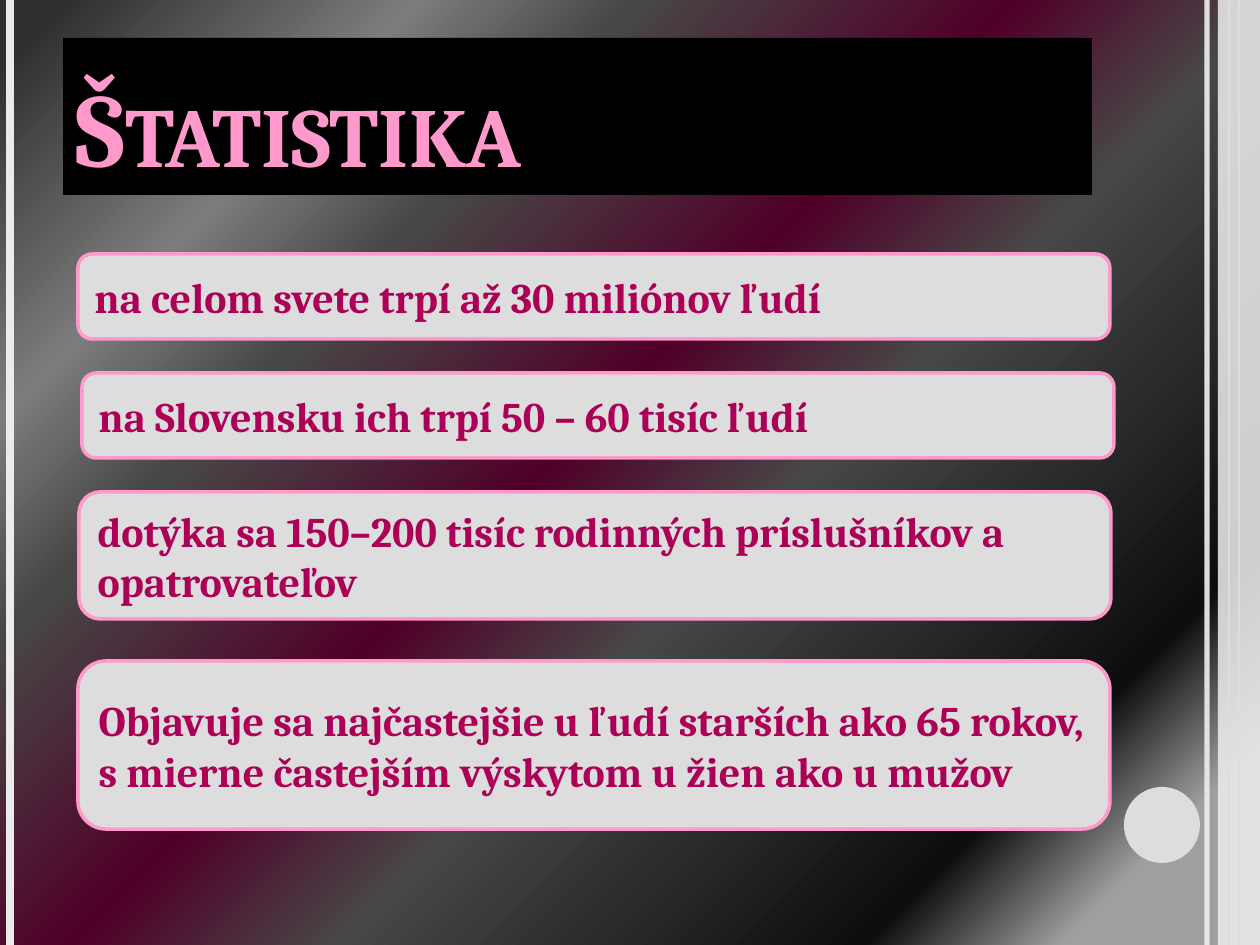
"""Build the Štatistika slide with four rounded fact boxes."""
from lxml import etree
from pptx import Presentation
from pptx.dml.color import RGBColor
from pptx.enum.shapes import MSO_CONNECTOR, MSO_SHAPE
from pptx.enum.text import MSO_ANCHOR, MSO_AUTO_SIZE, PP_ALIGN
from pptx.oxml import parse_xml
from pptx.oxml.ns import qn
from pptx.util import Pt

PX = 914400 / 126
W, H = 1260, 945
FONT = "Cambria"
STRAIGHT = MSO_CONNECTOR.STRAIGHT
RECT, OVAL = MSO_SHAPE.RECTANGLE, MSO_SHAPE.OVAL
BOX = MSO_SHAPE.FLOWCHART_ALTERNATE_PROCESS
MIDDLE, BOTTOM = MSO_ANCHOR.MIDDLE, MSO_ANCHOR.BOTTOM
LEFT, NO_FIT = PP_ALIGN.LEFT, MSO_AUTO_SIZE.NONE
C = {"pale": "EBEBEB", "grey": "DDDDDD", "pink": "FF99CC", "wine": "AC0056", "black": "000000"}
STOPS = [(9, "9F9F9F"), (18, "0D0D0D"), (42, "474747"), (54, "500028"),
         (71, "474747"), (81, "7C7C7C"), (97, "303030")]


def paint(fill, color, alpha=100):
    fill.solid()
    fill.fore_color.rgb = RGBColor.from_string(C[color])
    if alpha < 100:
        clr = fill._xPr.find(".//" + qn("a:srgbClr"))
        etree.SubElement(clr, qn("a:alpha")).set("val", str(alpha * 1000))


def write(tf, text, size, color, anchor):
    tf.word_wrap = True
    tf.auto_size = NO_FIT
    tf.vertical_anchor = anchor
    p = tf.paragraphs[0]
    p.alignment = LEFT
    r = p.add_run()
    r.text = text
    r.font.name, r.font.size, r.font.bold = FONT, Pt(size), True
    r.font.color.rgb = RGBColor.from_string(C[color])
    return r


prs = Presentation()
prs.slide_width, prs.slide_height = round(W * PX), round(H * PX)
s = prs.slides.add_slide(prs.slide_layouts[5])

s.background.fill.solid()
solid = s.background._cSld.find(".//" + qn("a:solidFill"))
stops = "".join(f'<a:gs pos="{pos * 1000}"><a:srgbClr val="{c}"/></a:gs>' for pos, c in STOPS)
solid.getparent().replace(solid, parse_xml(
    '<a:gradFill xmlns:a="http://schemas.openxmlformats.org/drawingml/2006/main" rotWithShape="1">'
    f'<a:gsLst>{stops}</a:gsLst><a:path path="circle"><a:fillToRect l="100000" t="100000"/></a:path>'
    '<a:tileRect r="-100000" b="-100000"/></a:gradFill>'))

strip = s.shapes.add_shape(RECT, *[round(v * PX) for v in (1218, 0, 42, H)])
strip.shadow.inherit = False
paint(strip.fill, "pale", 87)
strip.line.fill.background()

for x, color, width, alpha in [(1207, "pale", 3, 93), (10, "pale", 4.5, 100),
                               (1239, "grey", 1.5, 100), (1229, "grey", 0.75, 100)]:
    line = s.shapes.add_connector(STRAIGHT, round(x * PX), 0, round(x * PX), round(H * PX))
    paint(line.line.fill, color, alpha)
    line.line.width = Pt(width)
    etree.SubElement(line._element.spPr, qn("a:effectLst"))

dot = s.shapes.add_shape(OVAL, *[round(v * PX) for v in (1124, 787, 76, 76)])
dot.shadow.inherit = False
paint(dot.fill, "grey")
dot.line.fill.background()

title = s.shapes.title
title.left, title.top, title.width, title.height = [round(v * PX) for v in (63, 38, 1029, 157)]
paint(title.fill, "black")
r = write(title.text_frame, "Štatistika", 60, "pink", BOTTOM)
r.font._element.set("cap", "small")
s.shapes._spTree.append(title._element)

for x, y, h, text in [
    (78, 254, 85, "na celom svete trpí až 30 miliónov ľudí"),
    (82, 373, 85, "na Slovensku ich trpí 50 – 60 tisíc ľudí"),
    (79, 492, 127, "dotýka sa 150–200 tisíc rodinných príslušníkov a opatrovateľov"),
    (78, 661, 168, "Objavuje sa najčastejšie u ľudí starších ako 65 rokov, "
                   "s mierne častejším výskytom u žien ako u mužov"),
]:
    sp = s.shapes.add_shape(BOX, *[round(v * PX) for v in (x, y, 1032, h)])
    sp.shadow.inherit = False
    paint(sp.fill, "grey")
    paint(sp.line.fill, "pink")
    sp.line.width = Pt(2)
    write(sp.text_frame, text, 24, "wine", MIDDLE)

prs.save("out.pptx")
